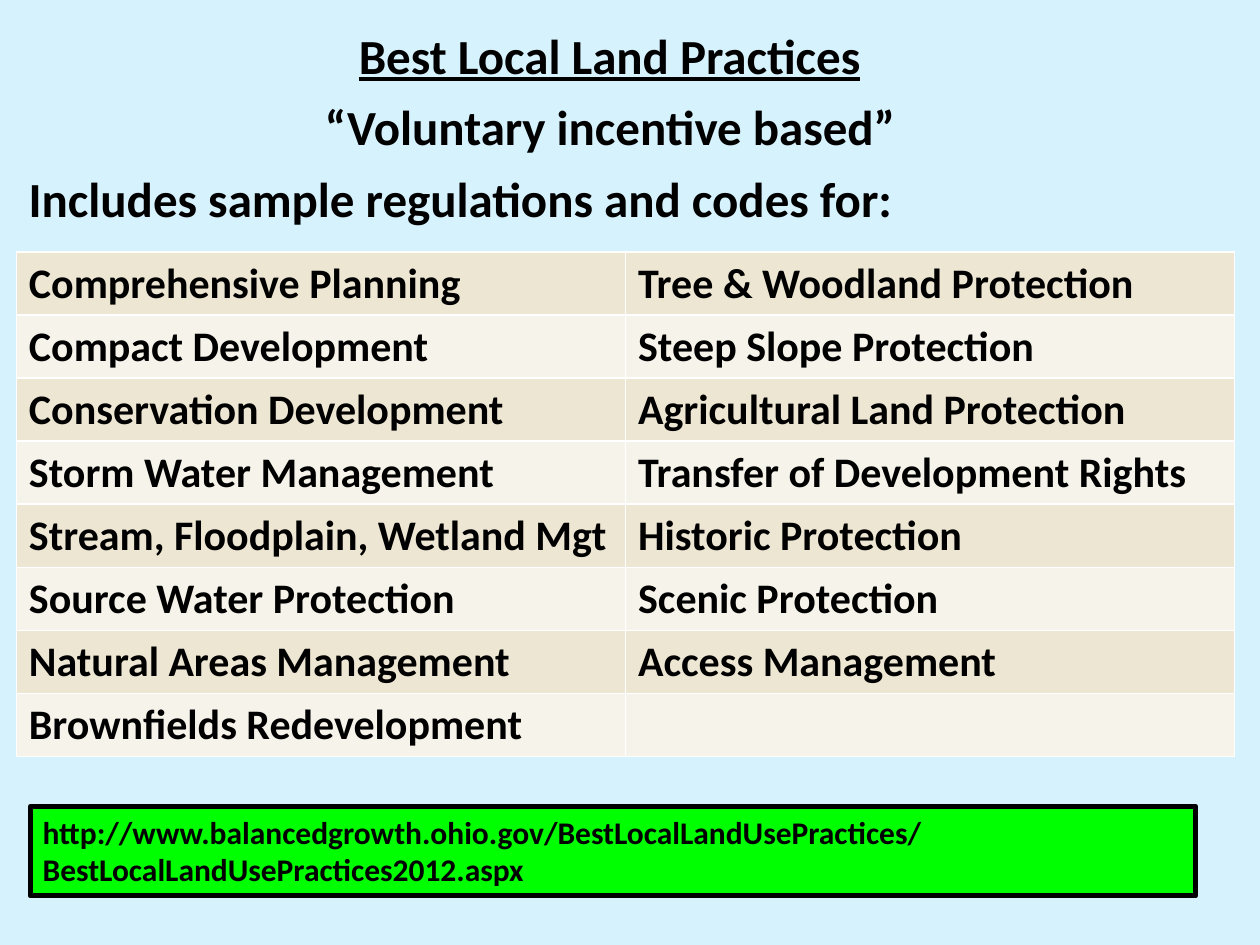
from lxml.etree import SubElement
from pptx import Presentation
from pptx.dml.color import RGBColor
from pptx.enum.shapes import MSO_SHAPE as Shape
from pptx.enum.text import MSO_ANCHOR as Anchor, PP_ALIGN as Align
from pptx.oxml.ns import qn
from pptx.util import Inches, Pt

COLORS = {
    "sky": "D6F2FD",
    "black": "000000",
    "white": "FFFFFF",
    "sand": "EDE6D3",
    "cream": "F6F3EA",
    "green": "00FF00",
}
TOPICS = [
    ("Comprehensive Planning", "Tree & Woodland Protection"),
    ("Compact Development", "Steep Slope Protection"),
    ("Conservation Development", "Agricultural Land Protection"),
    ("Storm Water Management", "Transfer of Development Rights"),
    ("Stream, Floodplain, Wetland Mgt", "Historic Protection"),
    ("Source Water Protection", "Scenic Protection"),
    ("Natural Areas Management", "Access Management"),
    ("Brownfields Redevelopment", ""),
]
HEADINGS = [
    ("Best Local Land Practices", 2.75, 4.24, True),
    ("“Voluntary incentive based”", 2.48, 4.78, False),
    ("Includes sample regulations and codes for:", 0.13, 7.13, False),
]
LINK = [
    "http://www.balancedgrowth.ohio.gov/BestLocalLandUsePractices/",
    "BestLocalLandUsePractices2012.aspx",
]


def color(name):
    return RGBColor.from_string(COLORS[name])


def paint(target, name):
    target.fill.solid()
    target.fill.fore_color.rgb = color(name)


def style(frame, size, underline=None):
    for para in frame.paragraphs:
        para.alignment = Align.LEFT
        for run in para.runs:
            font = run.font
            font.name, font.size = "Calibri", Pt(size)
            font.bold, font.underline = True, underline
            font.color.rgb = color("black")


def add_headings(slide, top, step):
    for row, (text, left, width, underline) in enumerate(HEADINGS):
        box = slide.shapes.add_textbox(
            Inches(left), Inches(top + row * step), Inches(width), Inches(step))
        frame = box.text_frame
        frame.word_wrap = False
        frame.text = text
        style(frame, 28, underline)


def add_borders(cell):
    props = cell._tc.get_or_add_tcPr()
    for side in ("lnL", "lnR", "lnT", "lnB"):
        line = SubElement(props, qn(f"a:{side}"), w=str(Pt(1)))
        fill = SubElement(line, qn("a:solidFill"))
        SubElement(fill, qn("a:srgbClr"), val=COLORS["white"])


def add_topics(slide, left, top, width, height):
    table = slide.shapes.add_table(
        len(TOPICS), 2, Inches(left), Inches(top),
        Inches(width), Inches(height)).table
    table.first_row = False
    for row, pair in enumerate(TOPICS):
        for col, text in enumerate(pair):
            cell = table.cell(row, col)
            add_borders(cell)
            paint(cell, "cream" if row % 2 else "sand")
            cell.text = text
            style(cell.text_frame, 24)


def add_link(slide, left, top, width, height):
    box = slide.shapes.add_shape(
        Shape.RECTANGLE, Inches(left), Inches(top),
        Inches(width), Inches(height))
    box.shadow.inherit = False
    paint(box, "green")
    box.line.color.rgb = color("black")
    box.line.width = Pt(3)
    frame = box.text_frame
    frame.word_wrap = True
    frame.vertical_anchor = Anchor.TOP
    frame.text = "\n".join(LINK)
    style(frame, 18)


def main():
    deck = Presentation()
    deck.slide_width, deck.slide_height = Inches(10), Inches(7.5)
    slide = deck.slides.add_slide(deck.slide_layouts[6])
    paint(slide.background, "sky")
    add_headings(slide, 0.15, 0.57)
    add_topics(slide, 0.13, 2, 9.67, 4)
    add_link(slide, 0.24, 6.4, 9.25, 0.71)
    deck.save("out.pptx")


if __name__ == "__main__":
    main()
